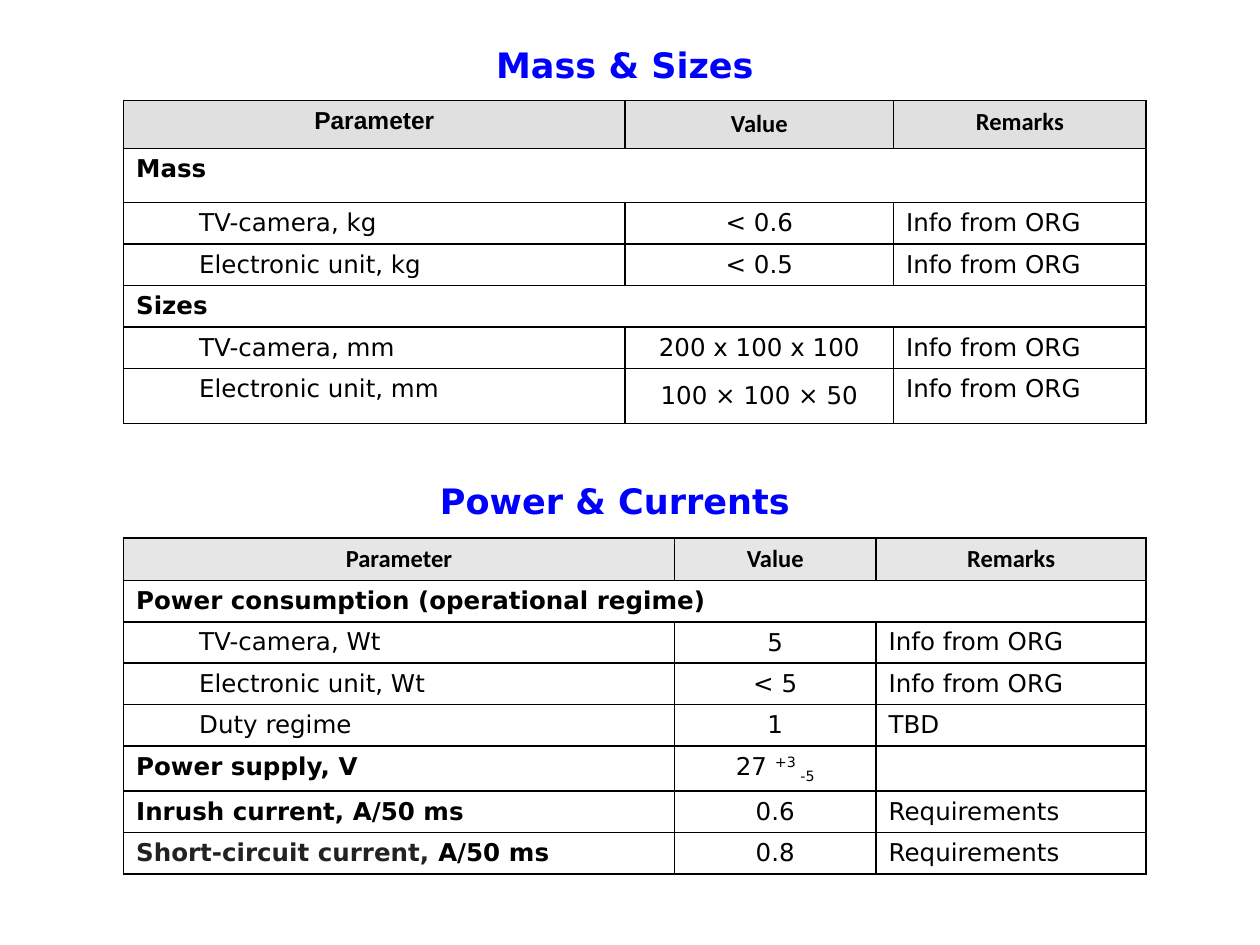
from dataclasses import dataclass

from lxml import etree
from pptx import Presentation
from pptx.dml.color import RGBColor
from pptx.enum.text import MSO_ANCHOR, MSO_AUTO_SIZE, PP_ALIGN
from pptx.oxml.ns import qn
from pptx.util import Pt

TOP, MIDDLE = MSO_ANCHOR.TOP, MSO_ANCHOR.MIDDLE
LEFT, CENTER = PP_ALIGN.LEFT, PP_ALIGN.CENTER
NO_AUTOFIT = MSO_AUTO_SIZE.NONE
TITLE_ONLY = 5


@dataclass(frozen=True)
class Theme:
    font: str = "DejaVu Sans"
    header_font: str = "Calibri"
    first_header_font: str = "Arial"
    heading_size: float = 20
    table_size: float = 14
    heading_color: str = "0000FF"
    ink: str = "000000"
    soft_ink: str = "222222"
    mass_header: str = "E0E0E0"
    power_header: str = "E6E6E6"
    border: float = 1
    indent: float = 36


THEME = Theme()


def add_span(para, text, font=THEME.font, size=THEME.table_size,
             color=THEME.ink, bold=False, baseline=0):
    """Append a formatted run; baseline is a percentage of the type size."""
    span = para.add_run()
    span.text = text
    span.font.name = font
    span.font.size = Pt(size)
    span.font.bold = bold
    span.font.color.rgb = RGBColor.from_string(color)
    if baseline:
        span.font._element.set("baseline", str(baseline * 1000))


class SlideBuilder:
    def __init__(self, deck, theme):
        self.theme = theme
        self.page = deck.slides.add_slide(deck.slide_layouts[TITLE_ONLY])

    def title(self, text, *bounds):
        box = self.page.shapes.title
        box.left, box.top, box.width, box.height = map(Pt, bounds)
        self.format_heading(box, text)

    def heading(self, text, *bounds):
        self.format_heading(self.page.shapes.add_textbox(*map(Pt, bounds)), text)

    def format_heading(self, box, text):
        frame = box.text_frame
        frame.word_wrap = True
        frame.auto_size = NO_AUTOFIT
        frame.vertical_anchor = TOP
        para = frame.paragraphs[0]
        para.alignment = CENTER
        para.line_spacing = 1.5
        add_span(para, text, size=self.theme.heading_size,
                 color=self.theme.heading_color, bold=True)

    def table(self, left, top, columns, heights, header_fonts, header_fill, rows):
        """Draw a header and rows; a row with one entry spans all columns."""
        frame = self.page.shapes.add_table(
            len(heights), len(columns), Pt(left), Pt(top),
            Pt(sum(columns)), Pt(sum(heights)))
        grid = frame.table
        grid.first_row = grid.horz_banding = False
        for column, width in zip(grid.columns, columns):
            column.width = Pt(width)
        for line, height in zip(grid.rows, heights):
            line.height = Pt(height)
        for cell in grid.iter_cells():
            self.border(cell)
            cell.fill.background()

        headers = zip(("Parameter", "Value", "Remarks"), header_fonts)
        for index, (text, font) in enumerate(headers):
            cell = grid.cell(0, index)
            cell.fill.solid()
            cell.fill.fore_color.rgb = RGBColor.from_string(header_fill)
            self.fill_cell(cell, [(text, {"font": font, "bold": True})],
                           CENTER, MIDDLE if index == 1 else TOP)

        for number, (label, *details) in enumerate(rows, start=1):
            first = grid.cell(number, 0)
            if not details:
                first.merge(grid.cell(number, len(columns) - 1))
            self.fill_cell(first, label["spans"], indented=label["indented"])
            if details:
                value, remark = details
                spans = [(value, {})] if isinstance(value, str) else value
                self.fill_cell(grid.cell(number, 1), spans, CENTER, MIDDLE)
                self.fill_cell(grid.cell(number, 2), [(remark, {})])

    def fill_cell(self, cell, spans, align=LEFT, anchor=TOP, indented=False):
        cell.vertical_anchor = anchor
        para = cell.text_frame.paragraphs[0]
        para.alignment = align
        if indented:
            para.level = 1
            para._p.get_or_add_pPr().set("marL", str(Pt(self.theme.indent)))
        for text, style in spans:
            if text:
                add_span(para, text, **style)
            else:  # an empty cell still needs its type size
                end = etree.SubElement(para._p, qn("a:endParaRPr"))
                end.set("sz", str(self.theme.table_size * 100))

    def border(self, cell):
        properties = cell._tc.get_or_add_tcPr()
        for side in ("lnL", "lnR", "lnT", "lnB"):
            line = etree.SubElement(properties, qn(f"a:{side}"),
                                    w=str(Pt(self.theme.border)))
            fill = etree.SubElement(line, qn("a:solidFill"))
            etree.SubElement(fill, qn("a:srgbClr"), val=self.theme.ink)


def group(*spans):
    """Bold label at the left edge."""
    bold = [(text, {"bold": True, **style}) for text, style in spans]
    return {"spans": bold, "indented": False}


def item(text):
    """Plain label, indented under its group."""
    return {"spans": [(text, {})], "indented": True}


def main():
    deck = Presentation()
    deck.slide_width, deck.slide_height = Pt(720), Pt(540)
    slide = SlideBuilder(deck, THEME)
    table_left, row_height = 70.6, 21.6
    agency = "Info from ORG"

    slide.title("Mass & Sizes", 223.9, 9.4, 266.4, 43.2)
    slide.table(
        table_left, 57.4, (286.6, 153.4, 144.4),
        (27.4, 31, *[row_height] * 4, 31.7),
        (THEME.first_header_font, THEME.header_font, THEME.header_font),
        THEME.mass_header,
        [
            (group(("Mass", {})),),
            (item("TV-camera, kg"), "< 0.6", agency),
            (item("Electronic unit, kg"), "< 0.5", agency),
            (group(("Sizes", {})),),
            (item("TV-camera, mm"), "200 x 100 x 100", agency),
            (item("Electronic unit, mm"), "100 × 100 × 50", agency),
        ])

    slide.heading("Power & Currents", 218.2, 258.5, 266.4, 43.2)
    tolerance = [("27 ", {}), ("+3 ", {"baseline": 30}), ("-5", {"baseline": -25})]
    slide.table(
        table_left, 307.4, (314.8, 115.2, 154.4), [row_height] * 8,
        [THEME.header_font] * 3, THEME.power_header,
        [
            (group(("Power consumption (operational regime)", {})),),
            (item("TV-camera, Wt"), "5", agency),
            (item("Electronic unit, Wt"), "< 5", agency),
            (item("Duty regime"), "1", "TBD"),
            (group(("Power supply, V", {})), tolerance, ""),
            (group(("Inrush current, A/50 ms", {})), "0.6", "Requirements"),
            (group(("Short-circuit current, ", {"color": THEME.soft_ink}),
                   ("A/50 ms", {})), "0.8", "Requirements"),
        ])
    deck.save("out.pptx")


if __name__ == "__main__":
    main()
